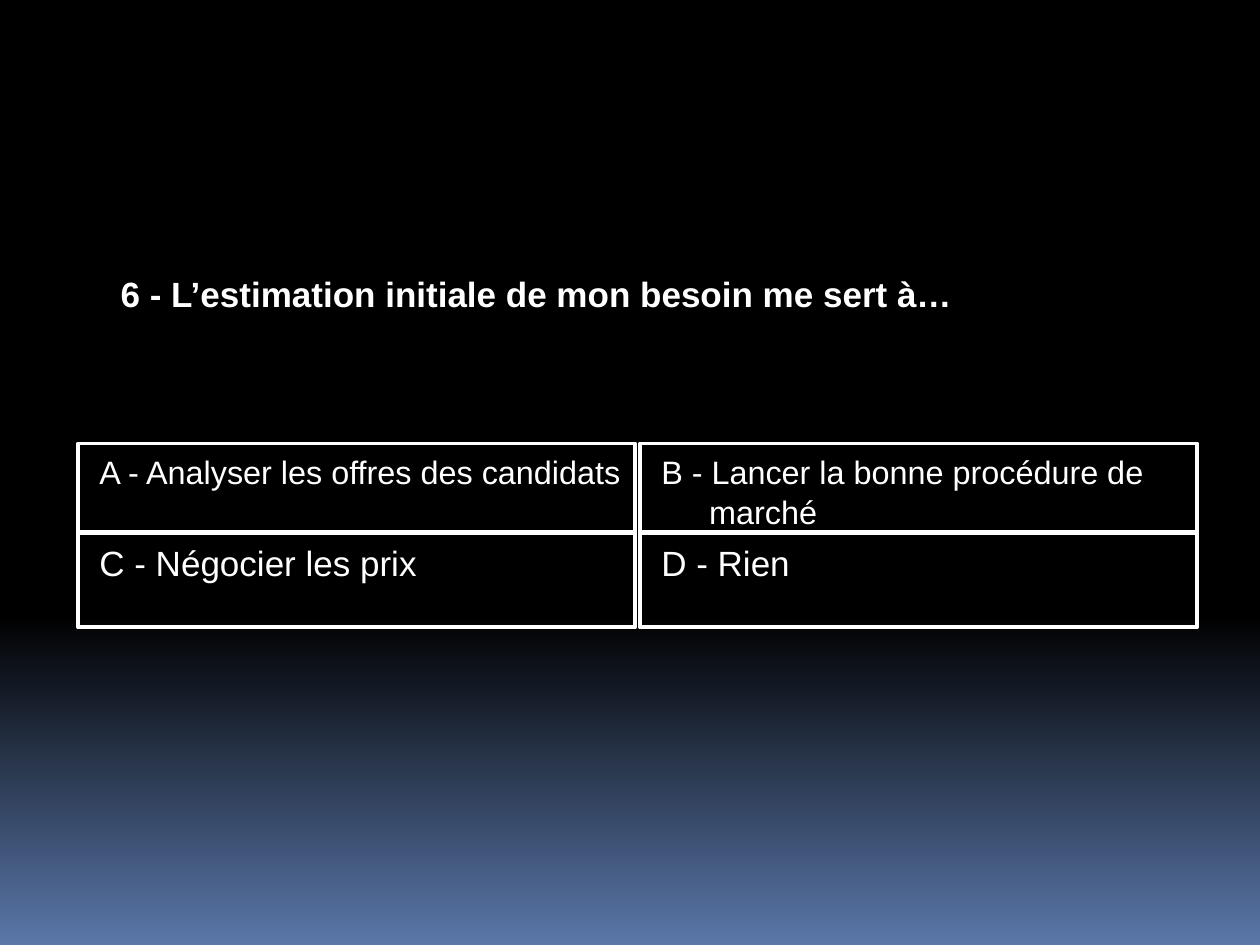
from pptx import Presentation
from pptx.dml.color import RGBColor
from pptx.enum.shapes import MSO_SHAPE as Shape
from pptx.enum.text import MSO_ANCHOR as Anchor, PP_ALIGN as Align
from pptx.util import Inches, Pt

# Content
QUESTION = "6 - L’estimation initiale de mon besoin me sert à…"
ANSWERS = [
    ["A - Analyser les offres des candidats",
     "B - Lancer la bonne procédure de marché"],
    ["C - Négocier les prix", "D - Rien"],
]
ROWS = [(3.52, 0.7, 18.5), (4.23, 0.75, 20)]  # top, height, text size
LEFT, WIDTH, STEP = 0.62, 4.42, 4.46
WHITE, BLACK, BLUE = "FFFFFF", "000000", "5A77A9"


def color(code):
    return RGBColor.from_string(code)


def write(shape, text, size=20, bold=False, indent=(0, 0), before=0,
          spacing=1.0, right=0.1):
    frame = shape.text_frame
    frame.word_wrap = True
    frame.vertical_anchor = Anchor.TOP
    frame.margin_right = Inches(right)
    para = frame.paragraphs[0]
    para.alignment = Align.LEFT
    para.space_before = Pt(before)
    para.line_spacing = spacing
    props = para._p.get_or_add_pPr()
    for key, value in zip(("marL", "indent"), indent):
        props.set(key, str(Inches(value)))
    run = para.add_run()
    run.text = text
    font = run.font
    font.name, font.size, font.bold = "Arial", Pt(size), bold
    font.color.rgb = color(WHITE)


deck = Presentation()
deck.slide_width, deck.slide_height = Inches(10), Inches(7.5)
slide = deck.slides.add_slide(deck.slide_layouts[6])

# Background: black, fading to blue in the lower third
fill = slide.background.fill
fill.gradient()
fill.gradient_angle = 270
for stop, (place, code) in zip(fill.gradient_stops, [(0.65, BLACK), (1, BLUE)]):
    stop.position = place
    stop.color.rgb = color(code)

# Question
title = slide.shapes.add_textbox(Inches(0.86), Inches(2.11), Inches(8.5), Inches(0.85))
write(title, QUESTION, bold=True)

# Answer grid
for (top, height, size), texts in zip(ROWS, ANSWERS):
    for col, text in enumerate(texts):
        box = slide.shapes.add_shape(
            Shape.RECTANGLE, Inches(LEFT + col * STEP), Inches(top),
            Inches(WIDTH), Inches(height))
        box.shadow.inherit = False
        box.fill.background()
        box.line.color.rgb = color(WHITE)
        box.line.width = Pt(2.25)
        write(box, text, size=size, indent=(0.45, -0.38), before=7,
              spacing=1.05, right=0.05)

deck.save("out.pptx")
